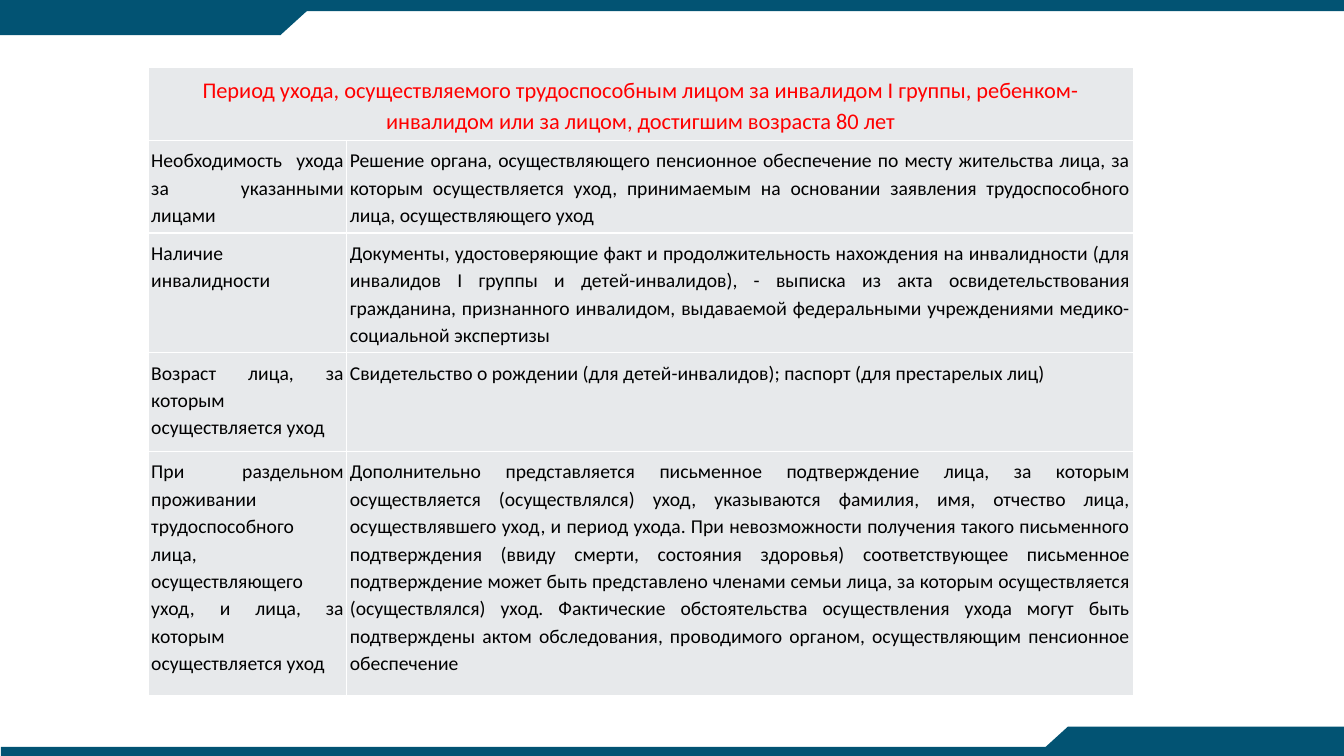
import pptx
import pptx.util
import pptx.dml.color
import pptx.enum.shapes
import pptx.enum.text
import pptx.oxml

Inches = pptx.util.Inches
Pt = pptx.util.Pt
Kind = pptx.enum.shapes.MSO_SHAPE
Align = pptx.enum.text.PP_ALIGN

COLORS = {"bar": "025373", "cell": "E7E9EB", "line": "FFFFFF",
          "title": "FF0000", "text": "000000"}

TITLE = ("Период ухода, осуществляемого трудоспособным лицом за инвалидом "
         "I группы, ребенком-инвалидом или за лицом, достигшим возраста 80 лет")
ROWS = [
    ("Необходимость ухода за указанными лицами",
     "Решение органа, осуществляющего пенсионное обеспечение по месту "
     "жительства лица, за которым осуществляется уход, принимаемым на "
     "основании заявления трудоспособного лица, осуществляющего уход"),
    ("Наличие инвалидности",
     "Документы, удостоверяющие факт и продолжительность нахождения на "
     "инвалидности (для инвалидов I группы и детей-инвалидов), - выписка из "
     "акта освидетельствования гражданина, признанного инвалидом, выдаваемой "
     "федеральными учреждениями медико-социальной экспертизы"),
    ("Возраст лица, за которым осуществляется уход",
     "Свидетельство о рождении (для детей-инвалидов); паспорт (для "
     "престарелых лиц)"),
    ("При раздельном проживании трудоспособного лица, осуществляющего уход, "
     "и лица, за которым осуществляется уход",
     "Дополнительно представляется письменное подтверждение лица, за которым "
     "осуществляется (осуществлялся) уход, указываются фамилия, имя, отчество "
     "лица, осуществлявшего уход, и период ухода. При невозможности получения "
     "такого письменного подтверждения (ввиду смерти, состояния здоровья) "
     "соответствующее письменное подтверждение может быть представлено "
     "членами семьи лица, за которым осуществляется (осуществлялся) уход. "
     "Фактические обстоятельства осуществления ухода могут быть подтверждены "
     "актом обследования, проводимого органом, осуществляющим пенсионное "
     "обеспечение"),
]


class Deck:
    def __init__(self, font):
        self.font = font
        self.prs = pptx.Presentation()
        self.prs.slide_width = Inches(13.33)
        self.prs.slide_height = Inches(7.5)
        self.slide = self.prs.slides.add_slide(self.prs.slide_layouts[6])

    def color(self, name):
        return pptx.dml.color.RGBColor.from_string(COLORS[name])

    def shape(self, kind, left, top, width, height, turn=0):
        box = self.slide.shapes.add_shape(
            kind, Inches(left), Inches(top), Inches(width), Inches(height))
        box.shadow.inherit = False
        box.fill.solid()
        box.fill.fore_color.rgb = self.color("bar")
        box.line.fill.background()
        box.rotation = turn

    def table(self, left, top, widths, heights):
        grid = self.slide.shapes.add_table(
            len(heights), len(widths), Inches(left), Inches(top),
            Inches(sum(widths)), Inches(sum(heights))).table
        for col, width in zip(grid.columns, widths):
            col.width = Inches(width)
        for row, height in zip(grid.rows, heights):
            row.height = Inches(height)
        for cell in grid.iter_cells():
            cell.fill.solid()
            cell.fill.fore_color.rgb = self.color("cell")
            cell.margin_left = cell.margin_right = Inches(0.03)
            cell.margin_top = cell.margin_bottom = Inches(0.05)
            self.border(cell)
        return grid

    def border(self, cell):
        props = cell._tc.get_or_add_tcPr()
        for spot, side in enumerate("LRTB"):
            props.insert(spot, pptx.oxml.parse_xml(
                f'<a:ln{side} w="{Pt(1)}" xmlns:a="http://schemas.'
                'openxmlformats.org/drawingml/2006/main"><a:solidFill>'
                f'<a:srgbClr val="{COLORS["line"]}"/></a:solidFill></a:ln{side}>'))

    def label(self, cell, text, size, color, align):
        cell.text = text
        para = cell.text_frame.paragraphs[0]
        para.alignment = align
        para.line_spacing = 1.15
        para.font.name = self.font
        para.font.size = Pt(size)
        para.font.bold = False
        para.font.color.rgb = self.color(color)


def main():
    deck = Deck("Calibri")

    # Edge bars with slanted tabs
    deck.shape(Kind.RECTANGLE, 0, 0, 13.33, 0.11)
    deck.shape(Kind.RECTANGLE, 0.01, 7.41, 13.33, 0.11)
    for tab, slant, top, turn in ((0, 2.45, 0.05, 0), (10.59, 10.26, 7.21, 180)):
        deck.shape(Kind.RECTANGLE, tab, top, 2.78, 0.3)
        deck.shape(Kind.FLOWCHART_MERGE, slant, top, 0.66, 0.3, turn)

    # Table of conditions and documents
    grid = deck.table(1.47, 0.67, [1.97, 7.8], [0.59, 0.9, 1.09, 0.98, 2.42])
    head = grid.cell(0, 0)
    head.merge(grid.cell(0, 1))
    deck.label(head, TITLE, 16, "title", Align.CENTER)
    for row, texts in enumerate(ROWS, 1):
        for col, text in enumerate(texts):
            deck.label(grid.cell(row, col), text, 14, "text", Align.JUSTIFY)

    deck.prs.save("out.pptx")


if __name__ == "__main__":
    main()
